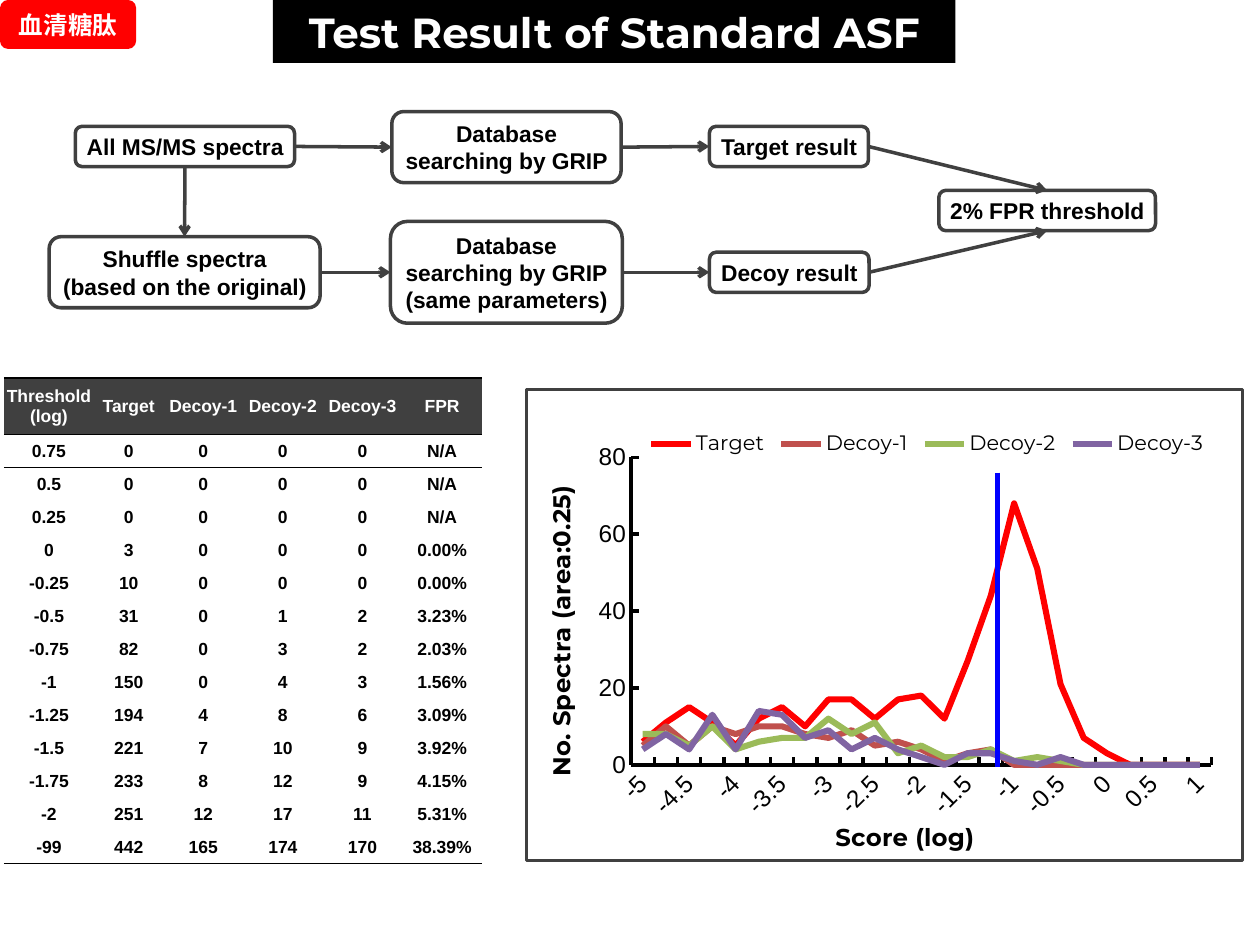
import pptx
import pptx.chart.data
import pptx.dml.color
import pptx.enum.chart
import pptx.enum.shapes
import pptx.enum.text
import pptx.oxml
import pptx.oxml.ns
import pptx.util

Pt = pptx.util.Pt
qn = pptx.oxml.ns.qn
SHAPE = pptx.enum.shapes.MSO_SHAPE
STRAIGHT = pptx.enum.shapes.MSO_CONNECTOR.STRAIGHT
CENTER = pptx.enum.text.PP_ALIGN.CENTER
MIDDLE = pptx.enum.text.MSO_ANCHOR.MIDDLE
AUTO_SIZE = pptx.enum.text.MSO_AUTO_SIZE
NAMESPACES = pptx.oxml.ns.nsdecls("a", "c")
GREY, BLACK, WHITE, RED, BLUE = "404040", "000000", "FFFFFF", "FF0000", "0000FF"
TOP, LEFT, BOTTOM, RIGHT = range(4)

# Content: flow steps as name: (text, centre x, centre y, width)
TITLE = "Test Result of Standard ASF"
TAG = "血清糖肽"
STEPS = {
    "all": ("All MS/MS spectra", 105.7, 83.7, 125.3),
    "shuffle": ("Shuffle spectra\n(based on the original)", 105.5, 155.6, 154.8),
    "search": ("Database\nsearching by GRIP", 289.4, 84.1, 131),
    "search decoy": ("Database\nsearching by GRIP\n(same parameters)", 289.4, 155.6, 132.5),
    "target": ("Target result", 450.8, 83.7, 90.9),
    "decoy": ("Decoy result", 451, 155.6, 91.2),
    "threshold": ("2% FPR threshold", 598.4, 120.3, 123.8),
}
ARROWS = [
    ("all", RIGHT, "search", LEFT), ("search", RIGHT, "target", LEFT),
    ("all", BOTTOM, "shuffle", TOP), ("shuffle", RIGHT, "search decoy", LEFT),
    ("search decoy", RIGHT, "decoy", LEFT),
    ("target", RIGHT, "threshold", TOP), ("decoy", RIGHT, "threshold", BOTTOM),
]
RATES = [
    ("Threshold\n(log)", "Target", "Decoy-1", "Decoy-2", "Decoy-3", "FPR"),
    ("0.75", 0, 0, 0, 0, "N/A"),
    ("0.5", 0, 0, 0, 0, "N/A"),
    ("0.25", 0, 0, 0, 0, "N/A"),
    ("0", 3, 0, 0, 0, "0.00%"),
    ("-0.25", 10, 0, 0, 0, "0.00%"),
    ("-0.5", 31, 0, 1, 2, "3.23%"),
    ("-0.75", 82, 0, 3, 2, "2.03%"),
    ("-1", 150, 0, 4, 3, "1.56%"),
    ("-1.25", 194, 4, 8, 6, "3.09%"),
    ("-1.5", 221, 7, 10, 9, "3.92%"),
    ("-1.75", 233, 8, 12, 9, "4.15%"),
    ("-2", 251, 12, 17, 11, "5.31%"),
    ("-99", 442, 165, 174, 170, "38.39%"),
]
COLUMN_WIDTHS = [51.5, 39.7, 45.5, 45.5, 45.5, 45.5]
SERIES = [
    ("Target", RED, (6, 11, 15, 11, 5, 12, 15, 10, 17, 17, 12, 17, 18, 12, 27, 44, 68,
                     51, 21, 7, 3, 0, 0, 0, 0)),
    ("Decoy-1", "C0504D", (5, 10, 5, 10, 8, 10, 10, 8, 7, 9, 5, 6, 4, 1, 3, 4, 0,
                           0, 0, 0, 0, 0, 0, 0, 0)),
    ("Decoy-2", "9BBB59", (8, 8, 5, 10, 4, 6, 7, 7, 12, 8, 11, 3, 5, 2, 2, 4, 1,
                           2, 1, 0, 0, 0, 0, 0, 0)),
    ("Decoy-3", "8064A2", (4, 8, 4, 13, 4, 14, 13, 7, 9, 4, 7, 4, 2, 0, 3, 3, 1,
                           0, 2, 0, 0, 0, 0, 0, 0)),
]


def rgb(value):
    return pptx.dml.color.RGBColor.from_string(value)


def apply(target, **values):
    for name, value in values.items():
        setattr(target, name, value)


def style_font(font, size, color=BLACK, name="Arial", bold=True):
    apply(font, size=Pt(size), name=name, bold=bold)
    font.color.rgb = rgb(color)


def style_line(line, color, width):
    line.color.rgb = rgb(color)
    line.width = Pt(width)


def write(frame, text, size, color=BLACK, name="Arial"):
    frame.text = text
    for para in frame.paragraphs:
        para.alignment = CENTER
        for span in para.runs:
            style_font(span.font, size, color, name)


def set_margins(target, side, vertical):
    apply(target, margin_left=Pt(side), margin_right=Pt(side),
          margin_top=Pt(vertical), margin_bottom=Pt(vertical))


def add_box(page, left, top, width, height, fill):
    box = page.shapes.add_shape(SHAPE.ROUNDED_RECTANGLE, Pt(left), Pt(top), Pt(width), Pt(height))
    box.shadow.inherit = False
    box.fill.solid()
    box.fill.fore_color.rgb = rgb(fill)
    return box


def add_line(page, color, width, start=(0, 0), end=(0, 0)):
    line = page.shapes.add_connector(STRAIGHT, *map(Pt, start + end))
    style_line(line.line, color, width)
    line.element.spPr.append(pptx.oxml.parse_xml(f"<a:effectLst {NAMESPACES}/>"))
    return line


def add_title(page):
    title = page.shapes.title
    apply(title, left=Pt(156), top=Pt(0), width=Pt(390), height=Pt(36))
    title.fill.solid()
    title.fill.fore_color.rgb = rgb(BLACK)
    apply(title.text_frame, vertical_anchor=MIDDLE, word_wrap=True, auto_size=AUTO_SIZE.NONE)
    write(title.text_frame, TITLE, 24, WHITE, "Montserrat")


def add_flow(page):
    boxes = {}
    for name, (text, x, y, width) in STEPS.items():
        height = 5.4 + 17.6 * len(text.split("\n"))
        box = boxes[name] = add_box(page, x - width / 2, y - height / 2, width, height, WHITE)
        style_line(box.line, GREY, 2)
        set_margins(box.text_frame, 5, 2.9)
        apply(box.text_frame, word_wrap=False, auto_size=AUTO_SIZE.SHAPE_TO_FIT_TEXT)
        write(box.text_frame, text, 13)
    for source, start_side, target, end_side in ARROWS:
        arrow = add_line(page, GREY, 2)
        arrow.begin_connect(boxes[source], start_side)
        arrow.end_connect(boxes[target], end_side)
        arrow.line._get_or_add_ln().append(
            pptx.oxml.parse_xml(f'<a:tailEnd {NAMESPACES} type="arrow"/>'))


def add_rates(page):
    frame = page.shapes.add_table(len(RATES), len(COLUMN_WIDTHS),
                                  Pt(2.2), Pt(216), Pt(sum(COLUMN_WIDTHS)), Pt(277.5))
    table = frame.table
    apply(table, first_row=False, horz_banding=False)
    # "No Style, No Grid"
    frame.element.xpath(".//a:tableStyleId")[0].text = "{2D5ABB26-0587-4C30-8999-92F81FD0307C}"
    for column, width in zip(table.columns, COLUMN_WIDTHS):
        column.width = Pt(width)
    ruled = {0: ("lnT", "lnB"), 1: ("lnT", "lnB"), len(RATES) - 1: ("lnB",)}
    for r, values in enumerate(RATES):
        table.rows[r].height = Pt(18.86 if r else 32.4)
        for c, value in enumerate(values):
            cell = table.cell(r, c)
            cell.vertical_anchor = MIDDLE
            set_margins(cell, 0, 0)
            write(cell.text_frame, str(value), 10, BLACK if r else WHITE)
            if r:
                cell.fill.background()
            else:
                cell.fill.solid()
                cell.fill.fore_color.rgb = rgb(GREY)
            for position, side in enumerate(ruled.get(r, ())):
                cell._tc.get_or_add_tcPr().insert(position, pptx.oxml.parse_xml(
                    f'<a:{side} {NAMESPACES} w="12700"><a:solidFill>'
                    f'<a:srgbClr val="{BLACK}"/></a:solidFill></a:{side}>'))


def set_layout(element, position, x, y, width, height, inner=""):
    for old in element.findall(qn("c:layout")):
        element.remove(old)
    element.insert(position, pptx.oxml.parse_xml(
        f'<c:layout {NAMESPACES}><c:manualLayout>{inner}'
        f'<c:xMode val="edge"/><c:yMode val="edge"/><c:x val="{x}"/><c:y val="{y}"/>'
        f'<c:w val="{width}"/><c:h val="{height}"/></c:manualLayout></c:layout>'))


def add_score_chart(page):
    data = pptx.chart.data.CategoryChartData()
    data.categories = [f"{-5 + i / 4:g}" for i in range(25)]
    for name, _, values in SERIES:
        data.add_series(name, values)
    chart = page.shapes.add_chart(pptx.enum.chart.XL_CHART_TYPE.LINE, Pt(300.2), Pt(221.8),
                                  Pt(410.4), Pt(270.7), data).chart
    style_font(chart.font, 14, bold=False)
    apply(chart, has_title=False, has_legend=True)
    chart.plots[0].vary_by_categories = False
    for series, (_, color, _) in zip(chart.plots[0].series, SERIES):
        series.smooth = False
        style_line(series.format.line, color, 3.5)

    # Axes
    marks = pptx.enum.chart.XL_TICK_MARK
    for axis, title in ((chart.category_axis, "Score (log)"),
                        (chart.value_axis, "No. Spectra (area:0.25)")):
        apply(axis, has_major_gridlines=False, major_tick_mark=marks.INSIDE,
              minor_tick_mark=marks.NONE)
        style_line(axis.format.line, BLACK, 2)
        style_font(axis.tick_labels.font, 14, bold=False)
        write(axis.axis_title.text_frame, title, 14, name="Montserrat")
    apply(chart.value_axis, minimum_scale=0, maximum_scale=80, major_unit=20)
    category = chart.element.xpath(".//c:catAx")[0]
    category.xpath("./c:txPr/a:bodyPr")[0].set("rot", "-2700000")
    category.find(qn("c:noMultiLvlLbl")).addprevious(
        pptx.oxml.parse_xml(f'<c:tickLblSkip {NAMESPACES} val="2"/>'))

    # Legend, plot area and border
    apply(chart.legend, position=pptx.enum.chart.XL_LEGEND_POSITION.TOP, include_in_layout=False)
    style_font(chart.legend.font, 12, name="Montserrat", bold=False)
    set_layout(chart.element.xpath(".//c:legend")[0], 1, 0.16, 0.08, 0.8, 0.07)
    set_layout(chart.element.xpath(".//c:plotArea")[0], 0, 0.146, 0.144, 0.811, 0.653,
               '<c:layoutTarget val="inner"/>')
    chart.element.find(qn("c:chart")).addnext(pptx.oxml.parse_xml(
        f'<c:spPr {NAMESPACES}><a:noFill/><a:ln w="19050"><a:solidFill>'
        f'<a:srgbClr val="{GREY}"/></a:solidFill></a:ln></c:spPr>'))
    # Cut-off marker
    add_line(page, BLUE, 3, (570.2, 270), (570.2, 438.5))


def add_tag(page):
    tag = add_box(page, 0, 0, 77.8, 28, RED)
    tag.line.fill.background()
    tag.text_frame.vertical_anchor = MIDDLE
    write(tag.text_frame, TAG, 14, WHITE, "Noto Sans CJK SC")
    for latin in tag.element.xpath(".//a:latin"):
        latin.addnext(pptx.oxml.parse_xml(f'<a:ea {NAMESPACES} typeface="Noto Sans CJK SC"/>'))


deck = pptx.Presentation()
apply(deck, slide_width=Pt(720), slide_height=Pt(540))
page = deck.slides.add_slide(deck.slide_layouts[5])
for add_part in (add_title, add_flow, add_rates, add_score_chart, add_tag):
    add_part(page)
deck.save("out.pptx")
